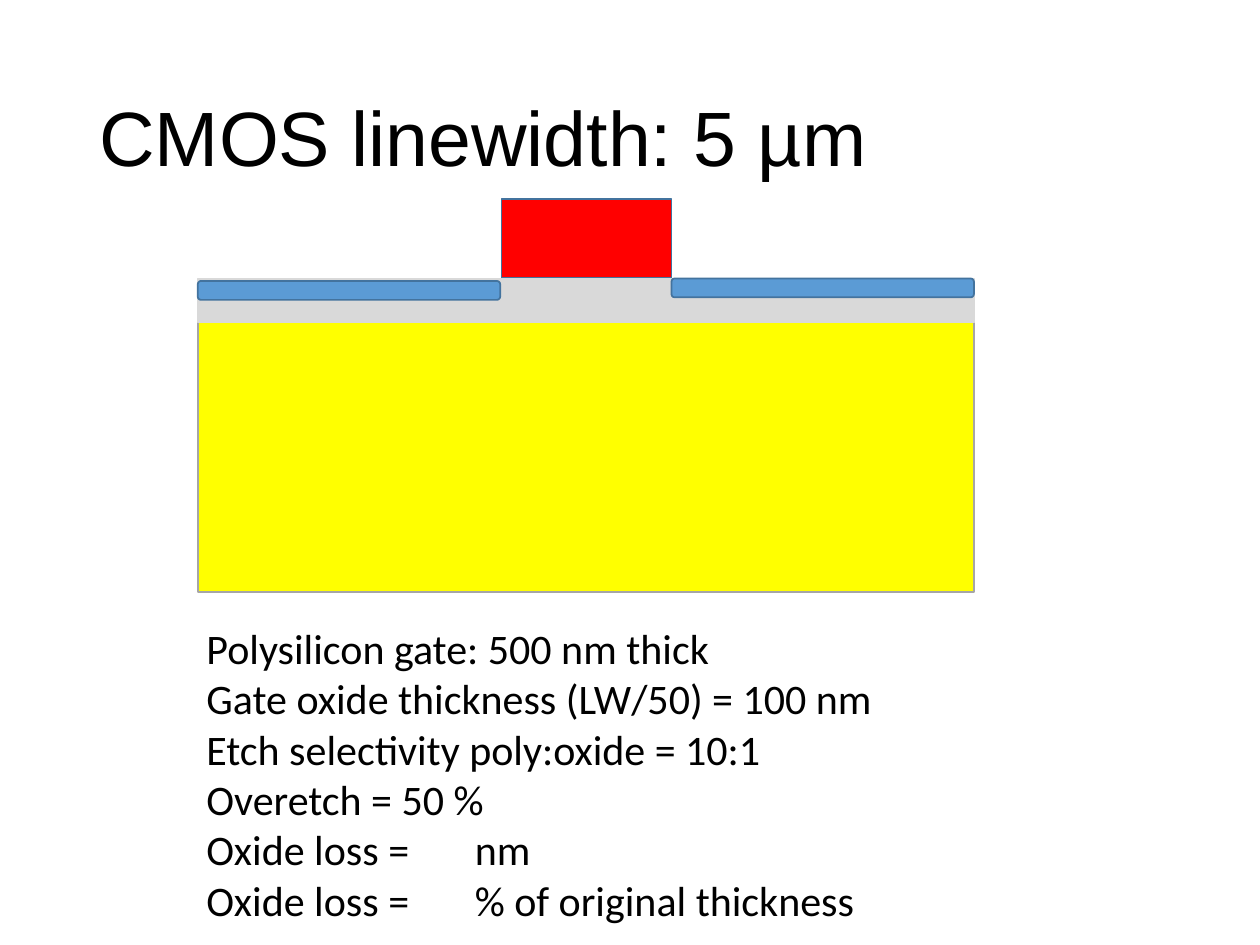
from lxml import etree
from pptx import Presentation
from pptx.dml.color import RGBColor
from pptx.enum.shapes import MSO_SHAPE
from pptx.enum.text import MSO_ANCHOR
from pptx.oxml.ns import qn
from pptx.util import Inches, Pt

RECTANGLE = MSO_SHAPE.RECTANGLE
ROUNDED = MSO_SHAPE.ROUNDED_RECTANGLE
TOP = MSO_ANCHOR.TOP
MIDDLE = MSO_ANCHOR.MIDDLE

COLORS = {
    "text": "000000",
    "gate": "FF0000",
    "substrate": "FFFF00",
    "oxide": "D9D9D9",
    "remaining": "5B9BD5",
    "outline": "43739E",
    "substrate_outline": "A6A6A6",
}

TITLE = "CMOS linewidth: 5 µm"
NOTES = [
    "Polysilicon gate: 500 nm thick",
    "Gate oxide thickness (LW/50) = 100 nm",
    "Etch selectivity poly:oxide = 10:1",
    "Overetch = 50 %",
    "Oxide loss =\tnm",
    "Oxide loss =\t% of original thickness",
]
VALUE_TAB = 2.13

STACK_LEFT, STACK_WIDTH = 1.57, 6.16
OXIDE_TOP, OXIDE_HEIGHT = 2.21, 0.35
SUBSTRATE_HEIGHT = 2.14
GATE_LEFT, GATE_WIDTH, GATE_HEIGHT = 3.98, 1.35, 0.63
FILM_WIDTH, FILM_HEIGHT = 2.4, 0.15
RIGHT_FILM_LEFT = STACK_LEFT + STACK_WIDTH - FILM_WIDTH

LAYERS = [
    (RECTANGLE, GATE_LEFT, OXIDE_TOP - GATE_HEIGHT, GATE_WIDTH, GATE_HEIGHT, "gate", "outline"),
    (RECTANGLE, STACK_LEFT, OXIDE_TOP + OXIDE_HEIGHT, STACK_WIDTH, SUBSTRATE_HEIGHT,
     "substrate", "substrate_outline"),
    (RECTANGLE, STACK_LEFT, OXIDE_TOP, STACK_WIDTH, OXIDE_HEIGHT, "oxide", "oxide"),
    (ROUNDED, RIGHT_FILM_LEFT, OXIDE_TOP, FILM_WIDTH, FILM_HEIGHT, "remaining", "outline"),
    (ROUNDED, STACK_LEFT, OXIDE_TOP + 0.02, FILM_WIDTH, FILM_HEIGHT, "remaining", "outline"),
]


def color(name):
    return RGBColor.from_string(COLORS[name])


def add_text(page, lines, bounds, font, size, anchor=TOP, spacing=None, tab=None):
    box = page.shapes.add_textbox(*map(Inches, bounds))
    frame = box.text_frame
    frame.word_wrap = True
    frame.vertical_anchor = anchor
    for index, line in enumerate(lines):
        para = frame.paragraphs[0] if index == 0 else frame.add_paragraph()
        if spacing:
            para.line_spacing = spacing
        if tab and "\t" in line:
            tabs = etree.SubElement(para._p.get_or_add_pPr(), qn("a:tabLst"))
            etree.SubElement(tabs, qn("a:tab"), pos=str(Inches(tab)), algn="l")
        span = para.add_run()
        span.text = line
        span.font.name = font
        span.font.size = Pt(size)
        span.font.color.rgb = color("text")


def add_layer(group, kind, left, top, width, height, fill, line):
    shape = group.shapes.add_shape(kind, *map(Inches, (left, top, width, height)))
    shape.shadow.inherit = False
    shape.fill.solid()
    shape.fill.fore_color.rgb = color(fill)
    shape.line.color.rgb = color(line)
    shape.line.width = Pt(1)


def main():
    deck = Presentation()
    deck.slide_width, deck.slide_height = Inches(10), Inches(7.5)
    page = deck.slides.add_slide(deck.slide_layouts[6])
    add_text(page, [TITLE], (0.69, 0.4, 8.62, 1.45), "Arial", 44, anchor=MIDDLE, spacing=0.9)
    add_text(page, NOTES, (1.54, 4.89, 7.57, 2.52), "Calibri", 24, tab=VALUE_TAB)
    transistor = page.shapes.add_group_shape()
    for layer in LAYERS:
        add_layer(transistor, *layer)
    deck.save("out.pptx")


if __name__ == "__main__":
    main()
